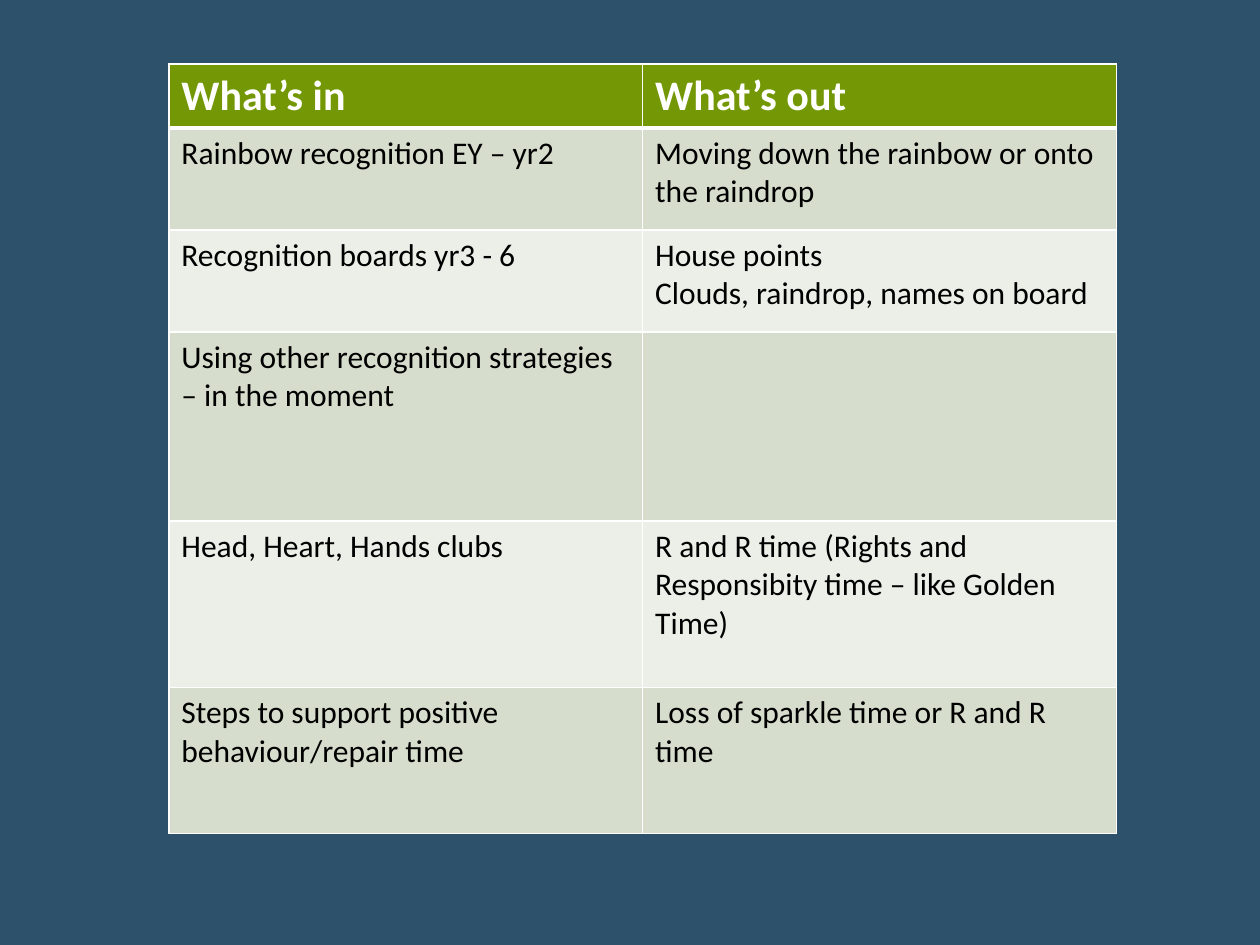
from lxml.etree import SubElement
from pptx import Presentation
from pptx.dml.color import RGBColor
from pptx.oxml.ns import qn
from pptx.util import Inches, Pt

FONT = "Calibri"
WHITE, BLACK = "FFFFFF", "000000"
BACKGROUND, HEADER_GREEN = "2D506B", "749805"
BANDS = ["D6DDCC", "EBEFE7"]

HEADINGS = ["What’s in", "What’s out"]
PRACTICES = [
    ("Rainbow recognition EY – yr2",
     "Moving down the rainbow or onto the raindrop"),
    ("Recognition boards yr3 - 6",
     "House points\nClouds, raindrop, names on board"),
    ("Using other recognition strategies – in the moment", ""),
    ("Head, Heart, Hands clubs",
     "R and R time (Rights and Responsibity time – like Golden Time)"),
    ("Steps to support positive behaviour/repair time",
     "Loss of sparkle time or R and R time"),
]
ROW_HEIGHTS = [0.5, 0.81, 0.81, 1.5, 1.32, 1.16]
COLUMN_WIDTH = 3.76


def colour(value):
    return RGBColor.from_string(value)


def write_text(frame, text, size=18, color=BLACK, bold=False):
    frame.text = text
    for paragraph in frame.paragraphs:
        paragraph.font.size = Pt(size)
        for run in paragraph.runs:
            run.font.name = FONT
            run.font.size = Pt(size)
            run.font.bold = bold
            run.font.color.rgb = colour(color)


def set_borders(cell, top=1, bottom=1):
    """Draw white cell borders, with widths in points."""
    properties = cell._tc.get_or_add_tcPr()
    widths = {"a:lnL": 1, "a:lnR": 1, "a:lnT": top, "a:lnB": bottom}
    for side, width in widths.items():
        line = SubElement(properties, qn(side), w=str(Pt(width)))
        fill = SubElement(line, qn("a:solidFill"))
        SubElement(fill, qn("a:srgbClr"), val=WHITE)


def format_cell(cell, text, fill, top=1, bottom=1, **text_format):
    set_borders(cell, top, bottom)
    cell.fill.solid()
    cell.fill.fore_color.rgb = colour(fill)
    write_text(cell.text_frame, text, **text_format)


def add_practice_table(slide):
    table = slide.shapes.add_table(
        len(PRACTICES) + 1, len(HEADINGS), Inches(1.34), Inches(0.51),
        Inches(COLUMN_WIDTH * len(HEADINGS)), Inches(sum(ROW_HEIGHTS))).table
    for column in table.columns:
        column.width = Inches(COLUMN_WIDTH)
    for row, height in zip(table.rows, ROW_HEIGHTS):
        row.height = Inches(height)

    # Header row, with a thick rule below it
    for index, heading in enumerate(HEADINGS):
        format_cell(table.cell(0, index), heading, HEADER_GREEN, bottom=3,
                    size=24, color=WHITE, bold=True)

    # Banded body rows
    for number, practice in enumerate(PRACTICES):
        for index, text in enumerate(practice):
            format_cell(table.cell(number + 1, index), text, BANDS[number % 2],
                        top=3 if number == 0 else 1)


def main():
    deck = Presentation()
    deck.slide_width, deck.slide_height = Inches(10), Inches(7.5)
    slide = deck.slides.add_slide(deck.slide_layouts[6])
    slide.background.fill.solid()
    slide.background.fill.fore_color.rgb = colour(BACKGROUND)
    add_practice_table(slide)
    deck.save("out.pptx")


if __name__ == "__main__":
    main()
